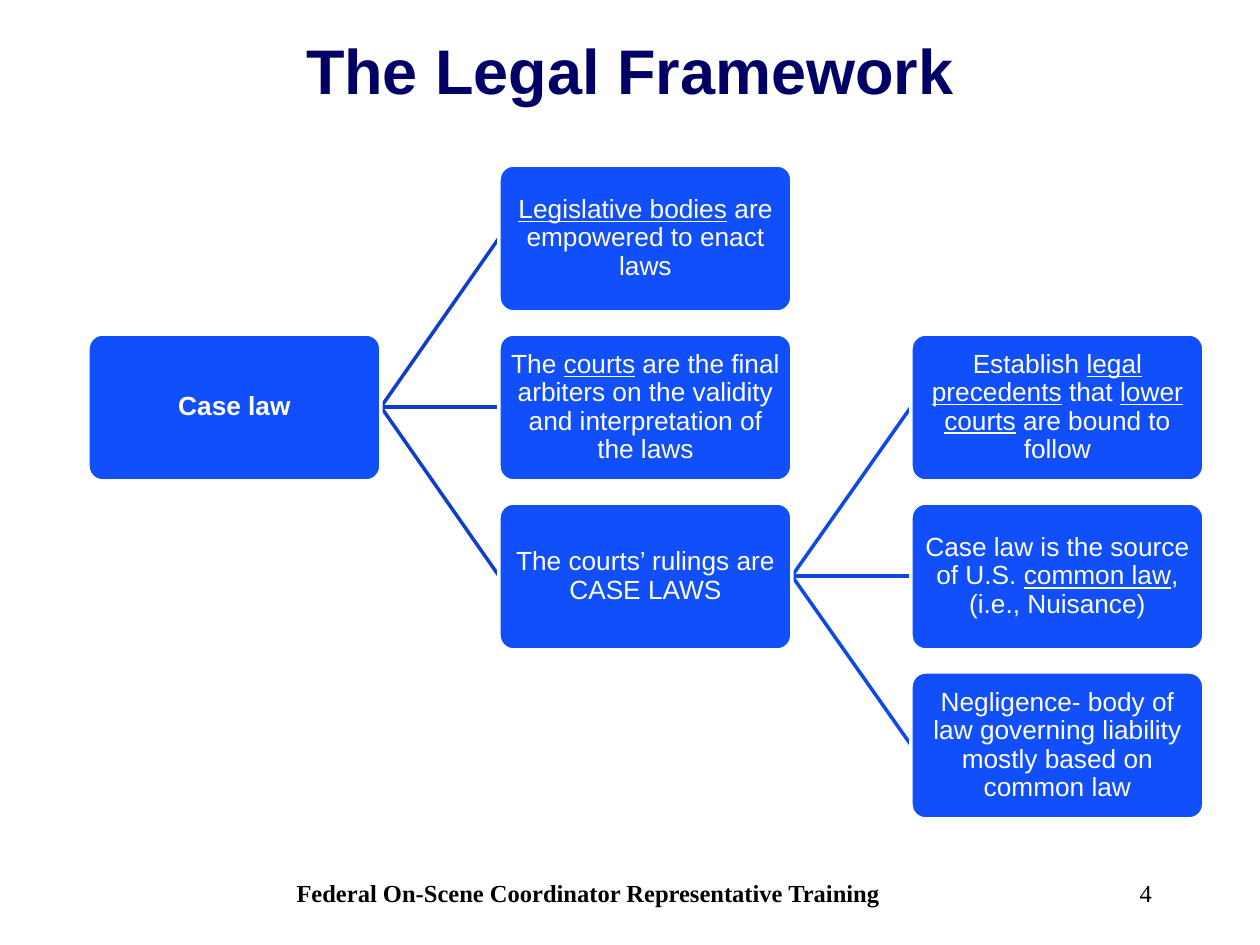
"""Builds the legal framework slide with its case law tree."""
import pptx
import pptx.dml.color
import pptx.enum.shapes
import pptx.enum.text
import pptx.oxml
import pptx.util

ALIGN = pptx.enum.text.PP_ALIGN
SCALE = 914400 // 126

TITLE = "The Legal Framework"
FOOTER = "Federal On-Scene Coordinator Representative Training"
PAGE_NUMBER = "4"

# Underscores enclose underlined words; each node is (column, row, text).
NODES = {
    "root": (0, 1, "Case law"),
    "bodies": (1, 0, "_Legislative bodies_ are empowered to enact laws"),
    "courts": (1, 1, "The _courts_ are the final arbiters on the validity "
                     "and interpretation of the laws"),
    "rulings": (1, 2, "The courts’ rulings are CASE LAWS"),
    "precedents": (2, 1, "Establish _legal precedents_ that _lower courts_ are bound to follow"),
    "source": (2, 2, "Case law is the source of U.S. _common law_, (i.e., Nuisance)"),
    "negligence": (2, 3, "Negligence- body of law governing liability "
                         "mostly based on common law"),
}
BRANCHES = [
    ("root", ("bodies", "courts", "rulings"), "0E3FC9"),
    ("rulings", ("precedents", "source", "negligence"), "0F48E4"),
]
COLUMN_LEFTS = (88, 499, 911)
TOP, ROW_STEP, BOX_WIDTH, BOX_HEIGHT = 165, 169, 293, 147


def px(*lengths):
    return [length * SCALE for length in lengths]


def color(value):
    return pptx.dml.color.RGBColor.from_string(value)


def write(shape, text, size=15, font="Arial", fill="FFFFFF", bold=False,
          align=ALIGN.CENTER, spacing=None, insets=(13, 6), wrap=True):
    frame = shape.text_frame
    frame.word_wrap = wrap
    frame.auto_size = pptx.enum.text.MSO_AUTO_SIZE.NONE
    frame.vertical_anchor = pptx.enum.text.MSO_ANCHOR.MIDDLE
    frame.margin_left = frame.margin_right = insets[0] * SCALE
    frame.margin_top = frame.margin_bottom = insets[1] * SCALE
    paragraph = frame.paragraphs[0]
    paragraph.alignment = align
    paragraph.line_spacing = spacing
    for index, part in enumerate(text.split("_")):
        if part:
            run = paragraph.add_run()
            run.text = part
            run.font.name = font
            run.font.size = pptx.util.Pt(size)
            run.font.bold = bold
            run.font.underline = index % 2 == 1
            run.font.color.rgb = color(fill)


def box_position(name):
    column, row, _ = NODES[name]
    return COLUMN_LEFTS[column], TOP + row * ROW_STEP


def add_branch(slide, parent, child, line_color):
    left, top = box_position(parent)
    end, child_top = box_position(child)
    middle = BOX_HEIGHT // 2
    connector = slide.shapes.add_connector(
        pptx.enum.shapes.MSO_CONNECTOR.STRAIGHT,
        *px(left + BOX_WIDTH, top + middle, end, child_top + middle))
    connector.line.color.rgb = color(line_color)
    connector.line.width = pptx.util.Pt(2)
    properties = connector._element.spPr
    properties.append(pptx.oxml.parse_xml(
        '<a:effectLst xmlns:a="http://schemas.openxmlformats.org/drawingml/2006/main"/>'))


def add_box(slide, name):
    shape = slide.shapes.add_shape(
        pptx.enum.shapes.MSO_SHAPE.ROUNDED_RECTANGLE,
        *px(*box_position(name), BOX_WIDTH, BOX_HEIGHT))
    shape.adjustments[0] = 0.1
    shape.shadow.inherit = False
    shape.fill.solid()
    shape.fill.fore_color.rgb = color("114FFB")
    shape.line.color.rgb = color("FFFFFF")
    shape.line.width = pptx.util.Pt(2)
    write(shape, NODES[name][2], bold=name == "root", spacing=0.9, insets=(5, 5))


def main():
    presentation = pptx.Presentation()
    presentation.slide_width, presentation.slide_height = px(1260, 945)
    slide = presentation.slides.add_slide(presentation.slide_layouts[5])

    title = slide.shapes.title
    title.left, title.top, title.width, title.height = px(34, 19, 1192, 101)
    write(title, TITLE, size=36, fill="000066", bold=True)

    for parent, children, line_color in BRANCHES:
        for child in children:
            add_branch(slide, parent, child, line_color)
    for name in NODES:
        add_box(slide, name)

    footer_format = {"size": 14, "font": "Times New Roman", "fill": "000000"}
    number = slide.shapes.add_textbox(*px(903, 861, 262, 63))
    write(number, PAGE_NUMBER, align=ALIGN.RIGHT, **footer_format)
    footer = slide.shapes.add_textbox(*px(305, 861, 567, 63))
    write(footer, FOOTER, bold=True, wrap=False, **footer_format)

    presentation.save("out.pptx")


if __name__ == "__main__":
    main()
